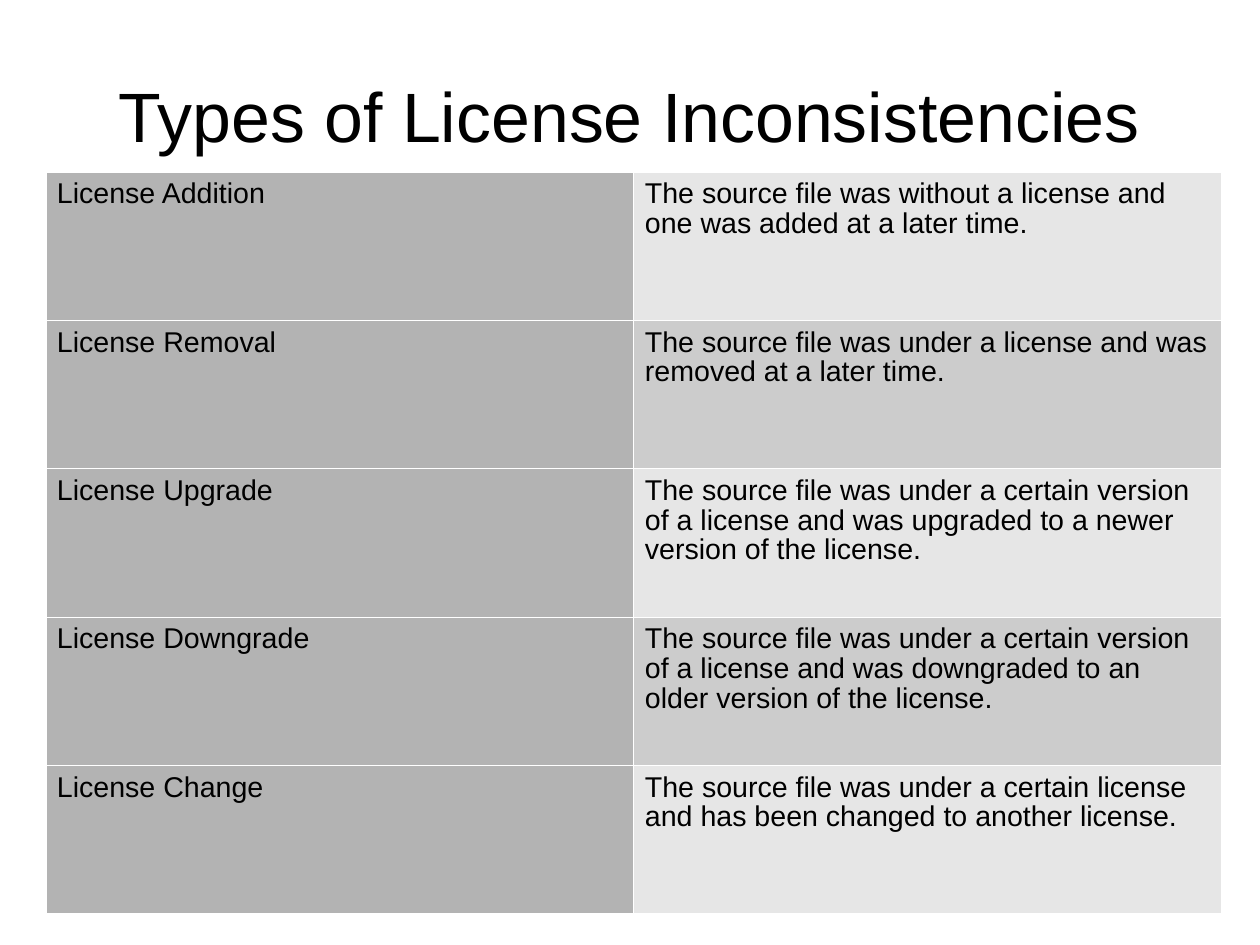
from pptx import Presentation
from pptx.dml.color import RGBColor
from pptx.enum.text import MSO_ANCHOR, PP_ALIGN
from pptx.oxml import parse_xml
from pptx.oxml.ns import nsdecls
from pptx.util import Pt

PX = 8000  # EMU per px
BLACK = RGBColor(0x00, 0x00, 0x00)
WHITE = RGBColor(0xFF, 0xFF, 0xFF)
TYPE_GRAY = RGBColor(0xB3, 0xB3, 0xB3)
MEANING_GRAYS = [RGBColor(0xE6, 0xE6, 0xE6), RGBColor(0xCC, 0xCC, 0xCC)]

INCONSISTENCIES = [
    ("License Addition",
     "The source file was without a license and one was added at a later time."),
    ("License Removal",
     "The source file was under a license and was removed at a later time."),
    ("License Upgrade",
     "The source file was under a certain version of a license and was "
     "upgraded to a newer version of the license."),
    ("License Downgrade",
     "The source file was under a certain version of a license and was "
     "downgraded to an older version of the license."),
    ("License Change",
     "The source file was under a certain license and has been changed to "
     "another license."),
]


def write(frame, text, size=18, color=BLACK, font="Arial", align=PP_ALIGN.LEFT):
    paragraph = frame.paragraphs[0]
    paragraph.alignment = align
    paragraph.line_spacing = 0.93
    run = paragraph.add_run()
    run.text = text
    run.font.name = font
    run.font.size = Pt(size)
    run.font.color.rgb = color


def set_margins(holder, left, top, right, bottom):
    holder.margin_left, holder.margin_top = left * PX, top * PX
    holder.margin_right, holder.margin_bottom = right * PX, bottom * PX


class SlideBuilder:
    def __init__(self, slide, border=WHITE, border_width=0.75):
        self.slide = slide
        self.border = border
        self.border_width = Pt(border_width)

    def title(self, text, left, top, width, height):
        box = self.slide.shapes.add_textbox(
            left * PX, top * PX, width * PX, height * PX)
        frame = box.text_frame
        frame.word_wrap = True
        frame.vertical_anchor = MSO_ANCHOR.MIDDLE
        set_margins(frame, 0, 5, 0, 0)
        write(frame, text, size=44, align=PP_ALIGN.CENTER)

    def table(self, rows, left, top, width, height):
        grid = self.slide.shapes.add_table(
            len(rows), len(rows[0]),
            left * PX, top * PX, width * PX, height * PX).table
        grid.first_row = grid.horz_banding = False
        for r, row in enumerate(rows):
            fills = TYPE_GRAY, MEANING_GRAYS[r % 2]
            for c, (text, fill) in enumerate(zip(row, fills)):
                self.cell(grid.cell(r, c), text, fill)

    def cell(self, cell, text, fill):
        set_margins(cell, 11, 8, 11, 6)
        write(cell.text_frame, text)
        cell.fill.solid()
        cell.fill.fore_color.rgb = fill
        # Borders come before the fill in the cell properties
        properties = cell._tc.get_or_add_tcPr()
        for position, side in enumerate(("lnL", "lnR", "lnT", "lnB")):
            properties.insert(position, parse_xml(
                f'<a:{side} {nsdecls("a")} w="{self.border_width}"><a:solidFill>'
                f'<a:srgbClr val="{self.border}"/></a:solidFill></a:{side}>'))


def main():
    deck = Presentation()
    deck.slide_width, deck.slide_height = 1260 * PX, 945 * PX
    builder = SlideBuilder(deck.slides.add_slide(deck.slide_layouts[6]))

    # Heading
    builder.title("Types of License Inconsistencies", 63, 38, 1134, 158)

    # Types and their meanings
    builder.table(INCONSISTENCIES, 46, 172, 1176, 742)

    deck.save("out.pptx")


if __name__ == "__main__":
    main()
